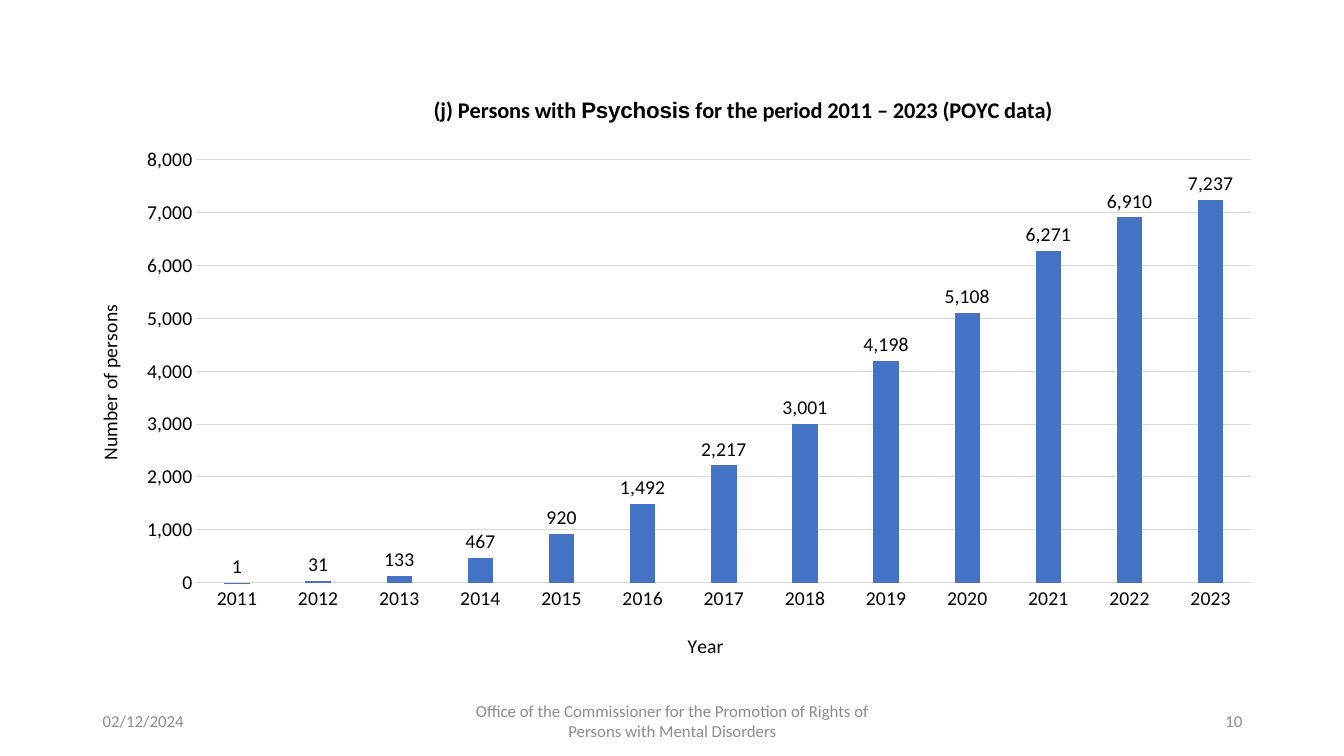
"""Build the slide with the yearly column chart of persons with psychosis."""
from pptx import Presentation
from pptx.chart.data import CategoryChartData
from pptx.dml.color import RGBColor
from pptx.enum.chart import XL_CHART_TYPE, XL_LABEL_POSITION, XL_TICK_MARK
from pptx.enum.text import MSO_ANCHOR, PP_ALIGN
from pptx.oxml import parse_xml
from pptx.oxml.ns import nsdecls
from pptx.util import Inches, Pt

COLORS = {"text": "000000", "footer": "8C8C8C", "grid": "D9D9D9", "column": "4472C4"}


def style_font(font, size, color, bold=False, name="Calibri"):
    font.name = name
    font.size = Pt(size)
    font.bold = bold
    font.color.rgb = RGBColor.from_string(COLORS[color])


def place(element, index, **fractions):
    for layout in element.xpath("c:layout"):
        element.remove(layout)
    target = '<c:layoutTarget val="inner"/>' if "w" in fractions else ""
    modes = "".join(f'<c:{key}Mode val="edge"/>' for key in "xy")
    values = "".join(f'<c:{key} val="{value}"/>' for key, value in fractions.items())
    element.insert(index, parse_xml(
        f'<c:layout {nsdecls("c")}><c:manualLayout>{target}{modes}{values}'
        "</c:manualLayout></c:layout>"))


presentation = Presentation()
presentation.slide_width = Inches(13.33)
presentation.slide_height = Inches(7.5)
slide = presentation.slides.add_slide(presentation.slide_layouts[6])

footers = [
    (0.92, 3, PP_ALIGN.LEFT, "02/12/2024"),
    (4.42, 4.5, PP_ALIGN.CENTER,
     "Office of the Commissioner for the Promotion of Rights of Persons with Mental Disorders"),
    (9.42, 3, PP_ALIGN.RIGHT, "10"),
]
for left, width, alignment, text in footers:
    shape = slide.shapes.add_textbox(Inches(left), Inches(6.95), Inches(width), Inches(0.4))
    shape.text_frame.word_wrap = True
    shape.text_frame.vertical_anchor = MSO_ANCHOR.MIDDLE
    paragraph = shape.text_frame.paragraphs[0]
    paragraph.alignment = alignment
    run = paragraph.add_run()
    run.text = text
    style_font(run.font, 12, "footer")

persons = [1, 31, 133, 467, 920, 1492, 2217, 3001, 4198, 5108, 6271, 6910, 7237]
chart_data = CategoryChartData(number_format="#,##0")
chart_data.categories = [str(year) for year in range(2011, 2024)]
chart_data.add_series("Series 1", persons)
chart = slide.shapes.add_chart(
    XL_CHART_TYPE.COLUMN_CLUSTERED, Inches(0.68), Inches(0.8),
    Inches(11.97), Inches(5.91), chart_data).chart
style_font(chart.font, 14, "text")
chart.has_legend = False

year_axis, persons_axis = chart.category_axis, chart.value_axis
titles = [
    (chart.chart_title, 16, True, [("(j) Persons with ", "Calibri"), ("Psychosis", "Arial"),
                                   (" for the period 2011 – 2023 (POYC data)", "Calibri")]),
    (year_axis.axis_title, 14, False, [("Year", "Calibri")]),
    (persons_axis.axis_title, 14, False, [("Number of persons", "Calibri")]),
]
for title, size, bold, runs in titles:
    paragraph = title.text_frame.paragraphs[0]
    for text, font_name in runs:
        run = paragraph.add_run()
        run.text = text
        style_font(run.font, size, "text", bold, font_name)

for axis in (year_axis, persons_axis):
    axis.major_tick_mark = axis.minor_tick_mark = XL_TICK_MARK.NONE
    style_font(axis.tick_labels.font, 14, "text")
persons_axis.minimum_scale = 0
persons_axis.maximum_scale = 8000
persons_axis.major_unit = 1000
persons_axis.tick_labels.number_format = "#,##0"
persons_axis.tick_labels.number_format_is_linked = False
persons_axis.format.line.fill.background()
for line in (year_axis.format.line, persons_axis.major_gridlines.format.line):
    line.color.rgb = RGBColor.from_string(COLORS["grid"])
    line.width = Pt(0.75)

plot = chart.plots[0]
plot.gap_width = 219
plot.overlap = -27
plot.vary_by_categories = False
series = plot.series[0]
series.format.fill.solid()
series.format.fill.fore_color.rgb = RGBColor.from_string(COLORS["column"])
labels = series.data_labels
labels.show_value = True
labels.position = XL_LABEL_POSITION.OUTSIDE_END
labels.number_format = "#,##0"
labels.number_format_is_linked = False
style_font(labels.font, 14, "text")

title_places = [(0.3, 0.02), (0.51, 0.92), (0.02, 0.37)]
for element, (x, y) in zip(chart.element.xpath(".//c:title"), title_places):
    place(element, 1, x=x, y=y)
place(chart.element.xpath(".//c:plotArea")[0], 0, x=0.106, y=0.133, w=0.874, h=0.71)

presentation.save("out.pptx")
